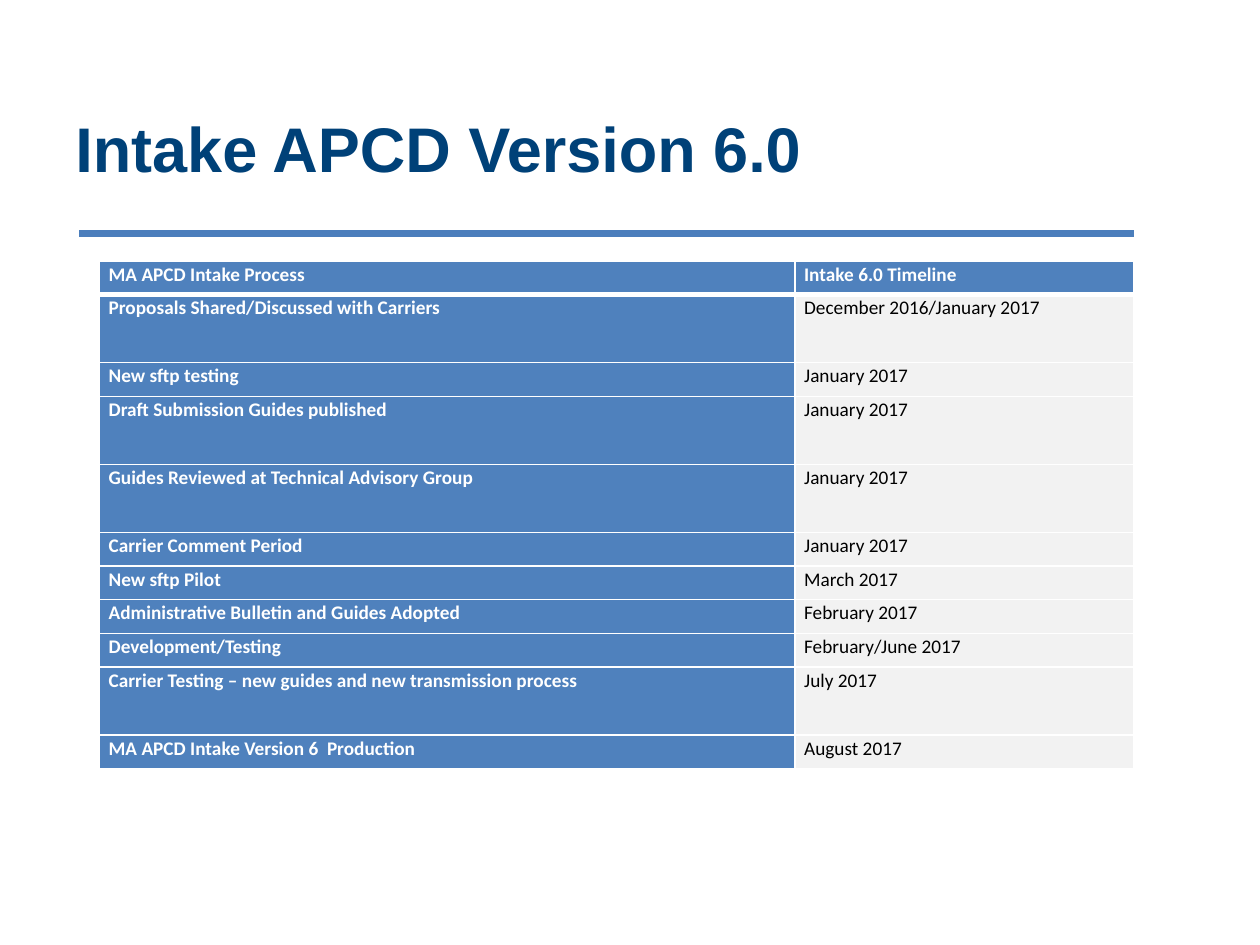
"""Builds the Intake APCD Version 6.0 timeline slide."""
import pptx
import pptx.dml.color
import pptx.enum.shapes
import pptx.enum.text
import pptx.oxml
import pptx.oxml.ns
import pptx.util
from pptx.util import Cm

TIMELINE = [
    ("MA APCD Intake Process", "Intake 6.0 Timeline"),
    ("Proposals Shared/Discussed with Carriers", "December 2016/January 2017"),
    ("New sftp testing", "January 2017"),
    ("Draft Submission Guides published", "January 2017"),
    ("Guides Reviewed at Technical Advisory Group", "January 2017"),
    ("Carrier Comment Period", "January 2017"),
    ("New sftp Pilot", "March 2017"),
    ("Administrative Bulletin and Guides Adopted", "February 2017"),
    ("Development/Testing", "February/June 2017"),
    ("Carrier Testing – new guides and new transmission process", "July 2017"),
    ("MA APCD Intake Version 6  Production", "August 2017"),
]
TALL_ROWS = {1, 3, 4, 9}


def color(hex_code):
    return pptx.dml.color.RGBColor.from_string(hex_code)


def write(frame, text, *, font, size, ink, bold=False, spacing=1.0):
    paragraph = frame.paragraphs[0]
    paragraph.line_spacing = spacing
    run = paragraph.add_run()
    run.text = text
    run.font.name = font
    run.font.size = pptx.util.Pt(size)
    run.font.bold = bold
    run.font.color.rgb = color(ink)


def add_xml(parent, tag, content="", attributes=""):
    namespace = pptx.oxml.ns.nsdecls("a")
    parent.append(pptx.oxml.parse_xml(
        f"<a:{tag} {namespace} {attributes}>{content}</a:{tag}>"))


class TimelineSlide:
    navy, rule_blue, blue, gray = "004178", "4B7EBC", "4F81BD", "F2F2F2"
    white, black = "FFFFFF", "000000"
    heading_font, body_font = "Arial", "Calibri"

    def __init__(self, deck):
        self.slide = deck.slides.add_slide(deck.slide_layouts[6])

    def rule(self, left, right, top):
        rule = self.slide.shapes.add_connector(
            pptx.enum.shapes.MSO_CONNECTOR.STRAIGHT, left, top, right, top)
        rule.line.color.rgb = color(self.rule_blue)
        rule.line.width = pptx.util.Pt(4)
        add_xml(rule._element.spPr, "effectLst")

    def title(self, text, left, top, width, height):
        frame = self.slide.shapes.add_textbox(left, top, width, height).text_frame
        frame.word_wrap = True
        frame.vertical_anchor = pptx.enum.text.MSO_ANCHOR.MIDDLE
        write(frame, text, font=self.heading_font, size=36, ink=self.navy, bold=True)

    def table(self, rows, tall_rows, left, top, widths, short, tall):
        heights = [tall if index in tall_rows else short for index in range(len(rows))]
        table = self.slide.shapes.add_table(
            len(rows), len(widths), left, top, sum(widths), sum(heights)).table
        for column, width in zip(table.columns, widths):
            column.width = width
        for row_index, (row, height) in enumerate(zip(rows, heights)):
            table.rows[row_index].height = height
            for column_index, text in enumerate(row):
                self.cell(table.cell(row_index, column_index), text,
                          label=row_index == 0 or column_index == 0,
                          top_width=3 if row_index == 1 else 1,
                          bottom_width=3 if row_index == 0 else 1)

    def cell(self, cell, text, label, top_width, bottom_width):
        cell.margin_left = cell.margin_right = Cm(0.18)
        cell.margin_top = cell.margin_bottom = 0
        self.borders(cell, lnL=1, lnR=1, lnT=top_width, lnB=bottom_width)
        cell.fill.solid()
        cell.fill.fore_color.rgb = color(self.blue if label else self.gray)
        write(cell.text_frame, text, font=self.body_font, size=11, bold=label,
              ink=self.white if label else self.black, spacing=1.07)

    def borders(self, cell, **widths):
        stroke = f'<a:solidFill><a:srgbClr val="{self.white}"/></a:solidFill>'
        for side, points in widths.items():
            add_xml(cell._tc.get_or_add_tcPr(), side, stroke,
                    f'w="{pptx.util.Pt(points)}"')


def main():
    deck = pptx.Presentation()
    deck.slide_width, deck.slide_height = Cm(25.4), Cm(19.05)
    page = TimelineSlide(deck)
    page.rule(Cm(1.6), Cm(22.86), Cm(4.7))
    page.title("Intake APCD Version 6.0", Cm(1.27), Cm(1.57), Cm(21.59), Cm(2.82))
    page.table(TIMELINE, TALL_ROWS, Cm(2.01), Cm(5.26),
               widths=[Cm(14.02), Cm(6.83)], short=Cm(0.68), tall=Cm(1.37))
    deck.save("out.pptx")


if __name__ == "__main__":
    main()
